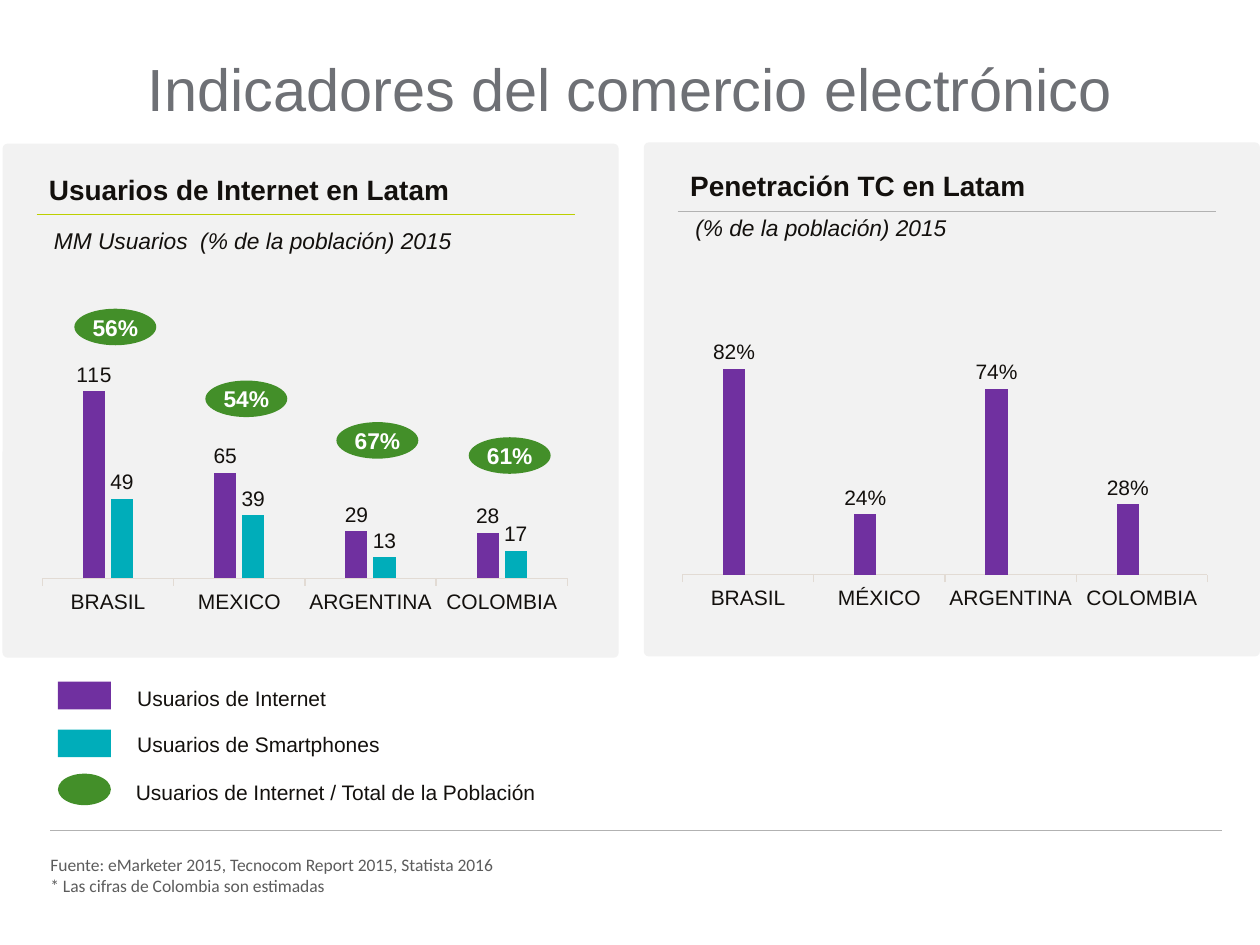
from pptx import Presentation
from pptx.chart.data import CategoryChartData
from pptx.dml.color import RGBColor
from pptx.enum.chart import XL_CHART_TYPE as ChartType, XL_LABEL_POSITION as LabelPosition
from pptx.enum.chart import XL_TICK_MARK as TickMark
from pptx.enum.shapes import MSO_CONNECTOR as Connector, MSO_SHAPE as Shape
from pptx.enum.text import MSO_ANCHOR as Anchor, PP_ALIGN as Align
from pptx.oxml.ns import qn
from pptx.util import Inches, Pt
from lxml import etree

COLORS = {
    "panel": "F2F2F2", "text": "13100D", "title": "6E7075", "source": "5C5C5C",
    "internet": "7030A0", "smartphone": "00ADBA", "share": "438F29",
    "lime": "BCCF00", "gray": "B2B2B2", "axis": "E2DBD4", "white": "FFFFFF",
}


def color(name):
    return RGBColor.from_string(COLORS[name])


def style(font, size, name, face="Arial", bold=False, italic=False):
    font.size, font.name = Pt(size), face
    font.bold, font.italic = bold, italic
    font.color.rgb = color(name)


deck = Presentation()
deck.slide_width, deck.slide_height = Inches(10), Inches(7.5)
page = deck.slides.add_slide(deck.slide_layouts[5])

title = page.shapes.title
title.left, title.top, title.width, title.height = Inches(0), Inches(0.38), Inches(10), Inches(0.71)
title.text_frame.vertical_anchor = Anchor.MIDDLE
para = title.text_frame.paragraphs[0]
para.alignment = Align.CENTER
para.line_spacing = 0.9
span = para.add_run()
span.text = "Indicadores del comercio electrónico"
style(span.font, 34, "title")

shapes = [
    (Shape.ROUNDED_RECTANGLE, 0.02, 1.14, 4.89, 4.08, "panel", ""),
    (Shape.ROUNDED_RECTANGLE, 5.11, 1.13, 4.89, 4.08, "panel", ""),
    (Shape.RECTANGLE, 0.46, 5.41, 0.42, 0.22, "internet", ""),
    (Shape.RECTANGLE, 0.46, 5.79, 0.42, 0.22, "smartphone", ""),
    (Shape.OVAL, 0.46, 6.14, 0.42, 0.25, "share", ""),
]

charts = [
    (0.25, 2.74, ["BRASIL", "MEXICO", "ARGENTINA", "COLOMBIA"],
     [115, 65, 29, 28], [49, 39, 13, 17], "#,##0", 140),
    (5.33, 2.71, ["BRASIL", "MÉXICO", "ARGENTINA", "COLOMBIA"],
     [0.82, 0.24, 0.74, 0.28], [None] * 4, "0%", 0.9),
]

bubbles = [(0.59, 2.45, "56%"), (1.63, 3.02, "54%"), (2.67, 3.35, "67%"), (3.72, 3.47, "61%")]

for kind, left, top, width, height, fill, _ in shapes:
    shape = page.shapes.add_shape(kind, Inches(left), Inches(top), Inches(width), Inches(height))
    shape.shadow.inherit = False
    shape.fill.solid()
    shape.fill.fore_color.rgb = color(fill)
    shape.line.fill.background()
    if kind == Shape.ROUNDED_RECTANGLE:
        shape.adjustments[0] = 0.01

for left, top, countries, internet, smartphones, number_format, maximum in charts:
    data = CategoryChartData(number_format=number_format)
    data.categories = countries
    data.add_series("Series 1", internet)
    data.add_series("Series 2", smartphones)
    chart = page.shapes.add_chart(ChartType.COLUMN_CLUSTERED, Inches(left), Inches(top),
                                  Inches(4.34), Inches(2.17), data).chart
    chart.has_legend = chart.has_title = False
    style(chart.font, 12, "text")
    chart.value_axis.visible = False
    chart.value_axis.has_major_gridlines = False
    chart.value_axis.minimum_scale, chart.value_axis.maximum_scale = 0, maximum
    axis = chart.category_axis
    axis.major_tick_mark = TickMark.OUTSIDE
    axis.format.line.color.rgb = color("axis")
    axis.format.line.width = Pt(0.75)
    style(axis.tick_labels.font, 12, "text")
    plot = chart.plots[0]
    plot.gap_width, plot.overlap, plot.vary_by_categories = 367, -27, False
    for series, fill in zip(plot.series, ["internet", "smartphone"]):
        series.format.fill.solid()
        series.format.fill.fore_color.rgb = color(fill)
        labels = series.data_labels
        labels.show_value = True
        labels.number_format, labels.number_format_is_linked = number_format, False
        labels.position = LabelPosition.OUTSIDE_END
        style(labels.font, 12, "text")

for left, top, share in bubbles:
    bubble = page.shapes.add_shape(Shape.OVAL, Inches(left), Inches(top), Inches(0.65), Inches(0.29))
    bubble.shadow.inherit = False
    bubble.fill.solid()
    bubble.fill.fore_color.rgb = color("share")
    bubble.line.fill.background()
    frame = bubble.text_frame
    frame.margin_left = frame.margin_right = Inches(0.04)
    frame.word_wrap = False
    frame.vertical_anchor = Anchor.MIDDLE
    para = frame.paragraphs[0]
    para.alignment = Align.CENTER
    span = para.add_run()
    span.text = share
    style(span.font, 13, "white", bold=True)

rules = [(0.29, 4.56, 1.7, "lime"), (5.38, 9.65, 1.68, "gray"), (0.4, 9.7, 6.59, "gray")]
for start, end, top, name in rules:
    rule = page.shapes.add_connector(Connector.STRAIGHT, Inches(start), Inches(top), Inches(end), Inches(top))
    rule.line.color.rgb = color(name)
    rule.line.width = Pt(0.5)
    etree.SubElement(rule.line._get_or_add_ln().getparent(), qn("a:effectLst"))

texts = [
    (0.29, 1.32, 4.3, 0.34, "Usuarios de Internet en Latam", 16, True, False),
    (5.38, 1.29, 4.3, 0.34, "Penetración TC en Latam", 16, True, False),
    (0.33, 1.75, 4.23, 0.32, "MM Usuarios  (% de la población) 2015", 13, False, True),
    (5.42, 1.65, 3.4, 0.32, "(% de la población) 2015", 13, False, True),
    (0.99, 5.39, 3.18, 0.3, "Usuarios de Internet", 12, False, False),
    (0.99, 5.76, 3.18, 0.3, "Usuarios de Smartphones", 12, False, False),
    (0.98, 6.14, 3.44, 0.3, "Usuarios de Internet / Total de la Población", 12, False, False),
]
for left, top, width, height, words, size, bold, italic in texts:
    box = page.shapes.add_textbox(Inches(left), Inches(top), Inches(width), Inches(height))
    box.text_frame.word_wrap = True
    span = box.text_frame.paragraphs[0].add_run()
    span.text = words
    style(span.font, size, "text", bold=bold, italic=italic)

source = page.shapes.add_textbox(Inches(0.4), Inches(6.75), Inches(8.91), Inches(0.38))
frame = source.text_frame
frame.word_wrap = True
frame.vertical_anchor = Anchor.BOTTOM
frame.margin_left = frame.margin_right = 0
frame.margin_top = frame.margin_bottom = Inches(0.02)
notes = ["Fuente: eMarketer 2015, Tecnocom Report 2015, Statista 2016",
         "* Las cifras de Colombia son estimadas"]
for index, note in enumerate(notes):
    para = frame.add_paragraph() if index else frame.paragraphs[0]
    span = para.add_run()
    span.text = note
    style(span.font, 10, "source", face="Calibri")

deck.save("out.pptx")
